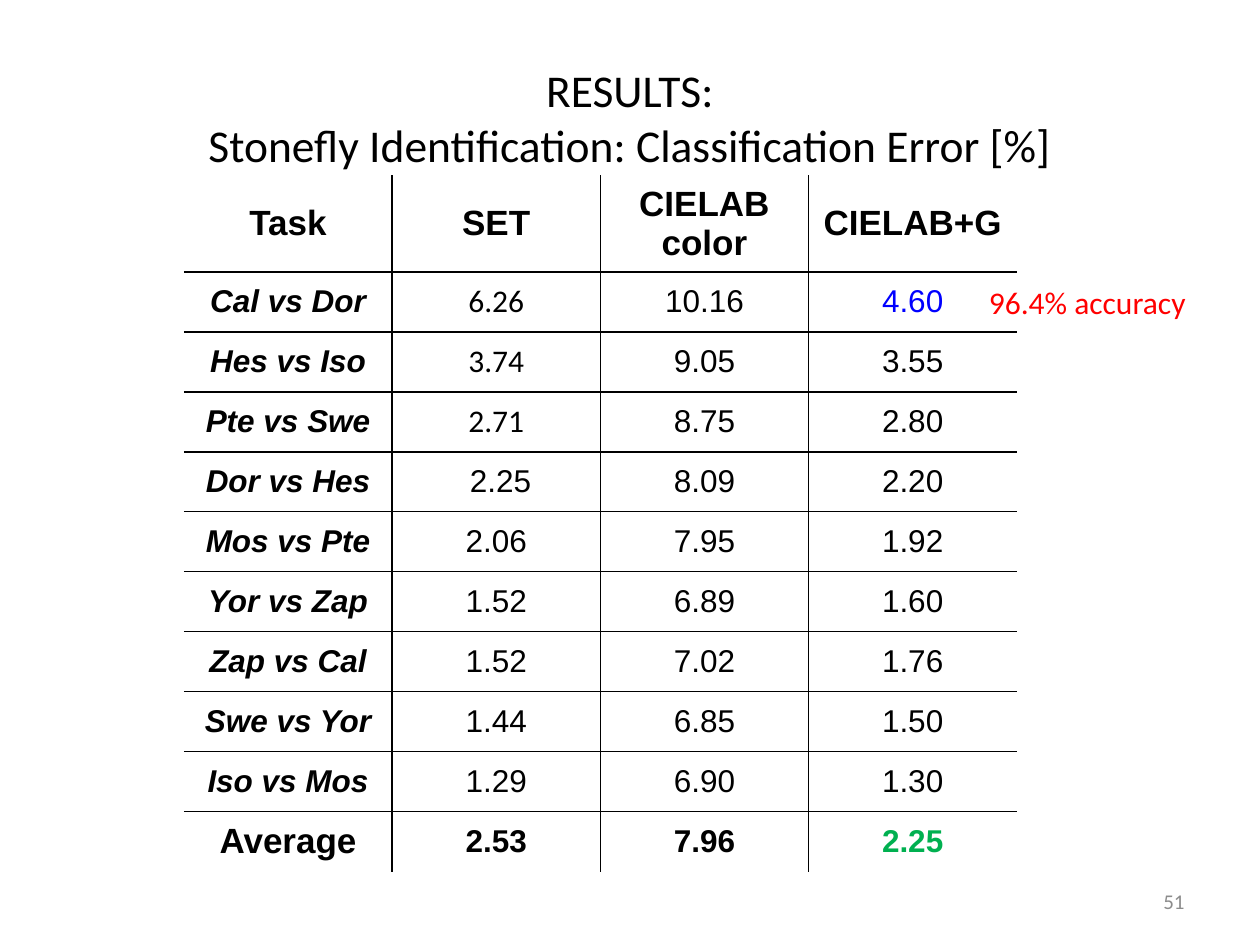
from typing import NamedTuple

from lxml import etree
from pptx import Presentation
from pptx import util as u
from pptx.dml.color import RGBColor
from pptx.enum import text
from pptx.oxml import ns

BLACK = RGBColor(0x00, 0x00, 0x00)
GRAY = RGBColor(0x8C, 0x8C, 0x8C)
RED = RGBColor(0xFF, 0x00, 0x00)
BLUE = RGBColor(0x00, 0x00, 0xFF)
GREEN = RGBColor(0x00, 0xB0, 0x50)

CENTER, LEFT, RIGHT = text.PP_ALIGN.CENTER, text.PP_ALIGN.LEFT, text.PP_ALIGN.RIGHT
MIDDLE, TOP = text.MSO_ANCHOR.MIDDLE, text.MSO_ANCHOR.TOP


class Result(NamedTuple):
    task: str
    set_error: str
    cielab: str
    cielab_g: str
    set_font: str = "Arial"
    best_color: RGBColor = BLACK


HEADER = ("Task", "SET", "CIELAB color", "CIELAB+G")
RESULTS = (
    Result("Cal vs Dor", "6.26", "10.16", "4.60", "Calibri", BLUE),
    Result("Hes vs Iso", "3.74", "9.05", "3.55", "Calibri"),
    Result("Pte vs Swe", "2.71", "8.75", "2.80", "Calibri"),
    Result("Dor vs Hes", " 2.25", "8.09", "2.20"),
    Result("Mos vs Pte", "2.06", "7.95", "1.92"),
    Result("Yor vs Zap", "1.52", "6.89", "1.60"),
    Result("Zap vs Cal", "1.52", "7.02", "1.76"),
    Result("Swe vs Yor", "1.44", "6.85", "1.50"),
    Result("Iso vs Mos", "1.29", "6.90", "1.30"),
)
AVERAGE = Result("Average", "2.53", "7.96", "2.25", best_color=GREEN)


def write(tf, words: str, *, size: float = 18, font: str = "Arial",
          color: RGBColor = BLACK, bold: bool = False, italic: bool = False,
          align=CENTER) -> None:
    """Fill the first paragraph; a vertical tab in the words breaks the line."""
    p = tf.paragraphs[0]
    p.text = words
    p.alignment = align
    for r in p.runs:
        r.font.size = u.Pt(size)
        r.font.name = font
        r.font.color.rgb = color
        r.font.bold = bold
        r.font.italic = italic


def add_text(s, words: str, left: float, top: float, width: float, height: float,
             *, anchor=MIDDLE, wrap: bool = True, **fmt) -> None:
    sp = s.shapes.add_textbox(u.Inches(left), u.Inches(top),
                              u.Inches(width), u.Inches(height))
    tf = sp.text_frame
    tf.word_wrap = wrap
    tf.vertical_anchor = anchor
    write(tf, words, font="Calibri", **fmt)


def set_borders(cell, sides: dict[str, bool]) -> None:
    """Draw a 1 pt black line on each side marked True, none on the others."""
    tc_pr = cell._tc.get_or_add_tcPr()
    for side, visible in sides.items():
        ln = etree.SubElement(tc_pr, ns.qn(f"a:ln{side}"), w=str(u.Pt(1)))
        if visible:
            fill = etree.SubElement(ln, ns.qn("a:solidFill"))
            etree.SubElement(fill, ns.qn("a:srgbClr"), val=str(BLACK))
        else:
            etree.SubElement(ln, ns.qn("a:noFill"))


def add_results_table(s) -> None:
    """Give all rows one height; the two-line heading makes its row grow."""
    rows, cols = len(RESULTS) + 2, len(HEADER)
    width, height = u.Inches(6.61), u.Inches(5.24)
    frame = s.shapes.add_table(rows, cols, u.Inches(1.46), u.Inches(1.39),
                               width, height)
    table = frame.table
    table.first_row = table.horz_banding = False
    for i, row in enumerate(table.rows):
        for j, cell in enumerate(row.cells):
            set_borders(cell, {"L": j > 0, "R": j < cols - 1,
                               "T": i > 0, "B": i < rows - 1})
            cell.fill.background()
            cell.vertical_anchor = MIDDLE

    for j, heading in enumerate(HEADER):
        write(table.cell(0, j).text_frame, heading, size=20, bold=True)
    for i, result in enumerate((*RESULTS, AVERAGE), start=1):
        average = result is AVERAGE
        task, set_error, cielab, cielab_g = (c.text_frame for c in table.rows[i].cells)
        write(task, result.task, size=20 if average else 18, bold=True,
              italic=not average)
        write(set_error, result.set_error, font=result.set_font, bold=average)
        write(cielab, result.cielab, bold=average)
        write(cielab_g, result.cielab_g, color=result.best_color, bold=average)


def main() -> None:
    prs = Presentation()
    prs.slide_width, prs.slide_height = u.Inches(10), u.Inches(7.5)
    s = prs.slides.add_slide(prs.slide_layouts[6])
    add_text(s, "RESULTS:\vStonefly Identification: Classification Error [%]",
             0.5, 0.3, 9, 1.25, size=26)
    add_text(s, "51", 7.17, 6.95, 2.33, 0.4, size=12, color=GRAY, align=RIGHT)
    add_results_table(s)
    add_text(s, "96.4% accuracy", 7.75, 2.2, 1.78, 0.4, anchor=TOP, wrap=False,
             color=RED, align=LEFT)
    prs.save("out.pptx")


if __name__ == "__main__":
    main()
